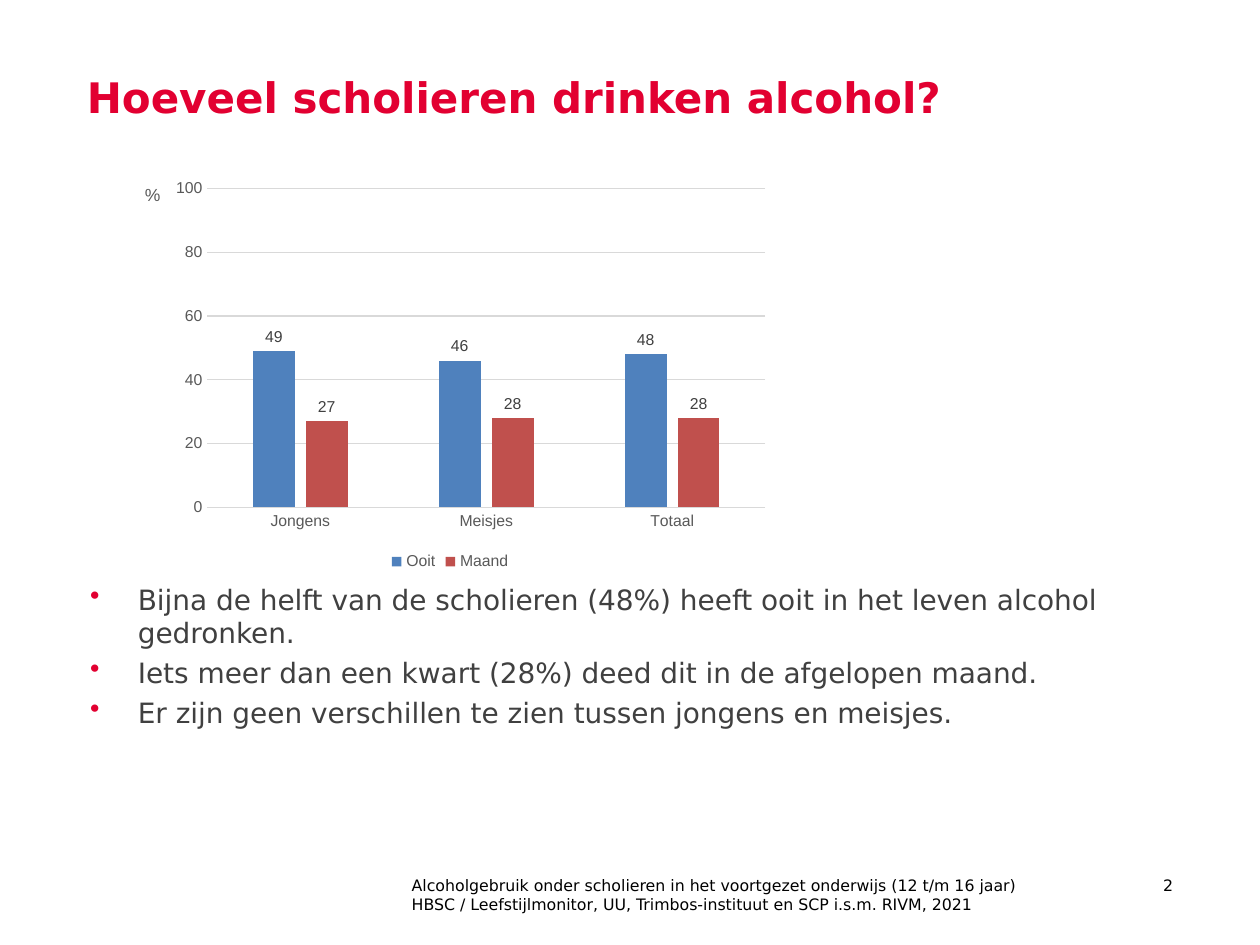
from dataclasses import dataclass

from pptx import Presentation
from pptx.chart.data import CategoryChartData
from pptx.dml.color import RGBColor
from pptx.enum.chart import XL_CHART_TYPE, XL_LABEL_POSITION, XL_LEGEND_POSITION, XL_TICK_MARK
from pptx.enum.text import MSO_ANCHOR, PP_ALIGN
from pptx.oxml import parse_xml
from pptx.oxml.ns import nsdecls, qn
from pptx.oxml.xmlchemy import OxmlElement
from pptx.util import Cm, Pt


@dataclass(frozen=True)
class Theme:
    text_font: str = "DejaVu Sans"
    chart_font: str = "Arial"
    accent: str = "E20031"
    body: str = "404040"
    footer: str = "000000"
    axis: str = "595959"
    grid: str = "D9D9D9"
    series: tuple = ("4F81BD", "C0504D")
    title_size: float = 24
    body_size: float = 16
    footer_size: float = 9
    chart_size: float = 9
    unit_size: float = 10


THEME = Theme()


def style_font(font, name, size, color, bold=False):
    font.name = name
    font.size = Pt(size)
    font.bold = bold
    font.color.rgb = RGBColor.from_string(color)


def style_line(line):
    line.color.rgb = RGBColor.from_string(THEME.grid)
    line.width = Pt(0.75)


def add_text(slide, box, lines, size, color, bold=False, align=PP_ALIGN.LEFT):
    shape = slide.shapes.add_textbox(*(Cm(length) for length in box))
    text_frame = shape.text_frame
    text_frame.word_wrap = True
    text_frame.vertical_anchor = MSO_ANCHOR.TOP
    text_frame.text = "\n".join(lines)
    for paragraph in text_frame.paragraphs:
        paragraph.alignment = align
        for run in paragraph.runs:
            style_font(run.font, THEME.text_font, size, color, bold)
    return text_frame


def add_bullets(slide, box, lines):
    text_frame = add_text(slide, box, lines, THEME.body_size, THEME.body)
    for index, paragraph in enumerate(text_frame.paragraphs):
        if index:
            paragraph.space_before = Pt(3.5)
        properties = paragraph._p.get_or_add_pPr()
        properties.set("marL", str(Cm(0.96)))
        properties.set("indent", str(-Cm(0.96)))
        color = OxmlElement("a:buClr")
        color_value = OxmlElement("a:srgbClr")
        color_value.set("val", THEME.accent)
        color.append(color_value)
        bullet = OxmlElement("a:buChar")
        bullet.set("char", "•")
        properties.extend([color, bullet])


def place(parent, position, target=None):
    """Give a chart part a manual layout, in fractions of the chart."""
    layout = parent.find(qn("c:layout"))
    if layout is not None:
        parent.remove(layout)
    parts = f'<c:layoutTarget val="{target}"/>' if target else ""
    parts += '<c:xMode val="edge"/><c:yMode val="edge"/>'
    parts += "".join(f'<c:{key} val="{value}"/>' for key, value in position.items())
    layout = parse_xml(f'<c:layout {nsdecls("c")}><c:manualLayout>{parts}</c:manualLayout></c:layout>')
    text = parent.find(qn("c:tx"))
    parent.insert(0 if text is None else 1, layout)


def style_axes(chart):
    for axis in (chart.category_axis, chart.value_axis):
        axis.major_tick_mark = axis.minor_tick_mark = XL_TICK_MARK.NONE
        style_font(axis.tick_labels.font, THEME.chart_font, THEME.chart_size, THEME.axis)
    style_line(chart.category_axis.format.line)

    value_axis = chart.value_axis
    value_axis.minimum_scale, value_axis.maximum_scale = 0, 100
    value_axis.major_unit = 20
    value_axis.tick_labels.number_format = "0"
    value_axis.tick_labels.number_format_is_linked = False
    value_axis.format.line.fill.background()
    style_line(value_axis.major_gridlines.format.line)

    # Upright unit sign beside the top of the scale
    title = value_axis.axis_title
    title.text_frame.text = "%"
    run = title.text_frame.paragraphs[0].runs[0]
    style_font(run.font, THEME.chart_font, THEME.unit_size, THEME.axis)
    body = title._element.find(".//" + qn("a:bodyPr"))
    body.set("rot", "0")
    body.set("vert", "horz")
    place(title._element, {"x": 0.03, "y": 0.02})


def add_column_chart(slide, box, categories, series_values):
    chart_data = CategoryChartData(number_format="0")
    chart_data.categories = categories
    for name, values in series_values.items():
        chart_data.add_series(name, values)
    chart = slide.shapes.add_chart(
        XL_CHART_TYPE.COLUMN_CLUSTERED, *(Cm(length) for length in box), chart_data
    ).chart
    chart.has_title = False
    style_font(chart.font, THEME.chart_font, THEME.unit_size, THEME.footer)
    style_axes(chart)
    place(chart._chartSpace.chart.plotArea, {"x": 0.13, "y": 0.04, "w": 0.85, "h": 0.79}, "inner")

    # Columns and their values
    plot = chart.plots[0]
    plot.gap_width, plot.overlap = 219, -27
    plot.vary_by_categories = False
    for series, color in zip(plot.series, THEME.series):
        series.format.fill.solid()
        series.format.fill.fore_color.rgb = RGBColor.from_string(color)
        labels = series.data_labels
        labels.show_value = True
        labels.position = XL_LABEL_POSITION.OUTSIDE_END
        labels.number_format = "0"
        labels.number_format_is_linked = False
        style_font(labels.font, THEME.chart_font, THEME.chart_size, THEME.body)

    chart.has_legend = True
    chart.legend.position = XL_LEGEND_POSITION.BOTTOM
    chart.legend.include_in_layout = False
    style_font(chart.legend.font, THEME.chart_font, THEME.chart_size, THEME.axis)


def main():
    presentation = Presentation()
    presentation.slide_width, presentation.slide_height = Cm(25.4), Cm(19.05)
    slide = presentation.slides.add_slide(presentation.slide_layouts[6])

    # Footer and slide number
    add_text(slide, (8.05, 17.53, 14.2, 1.02), [
        "Alcoholgebruik onder scholieren in het voortgezet onderwijs (12 t/m 16 jaar)",
        "HBSC / Leefstijlmonitor, UU, Trimbos-instituut en SCP i.s.m. RIVM, 2021",
    ], THEME.footer_size, THEME.footer)
    add_text(slide, (21.9, 17.53, 2, 1.02), ["2"],
             THEME.footer_size, THEME.footer, align=PP_ALIGN.RIGHT)

    # Title
    add_text(slide, (1.5, 1.32, 22.4, 3.2), ["Hoeveel scholieren drinken alcohol?"],
             THEME.title_size, THEME.accent, bold=True)

    # Findings
    add_bullets(slide, (1.57, 11.61, 22.4, 5.61), [
        "Bijna de helft van de scholieren (48%) heeft ooit in het leven alcohol gedronken.",
        "Iets meer dan een kwart (28%) deed dit in de afgelopen maand.",
        "Er zijn geen verschillen te zien tussen jongens en meisjes.",
    ])

    # Chart
    add_column_chart(slide, (2.46, 3.48, 13.23, 8.13), ["Jongens", "Meisjes", "Totaal"],
                     {"Ooit": (49, 46, 48), "Maand": (27, 28, 28)})

    presentation.save("out.pptx")


if __name__ == "__main__":
    main()
